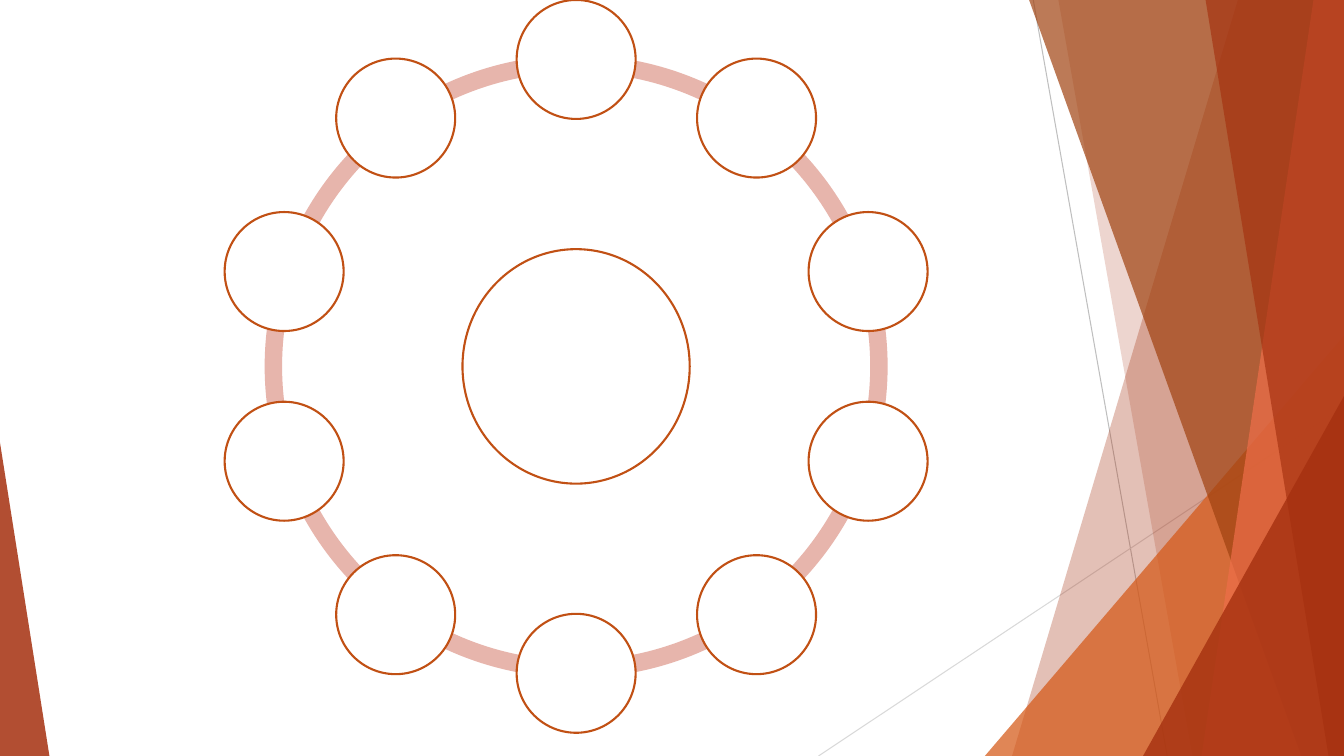
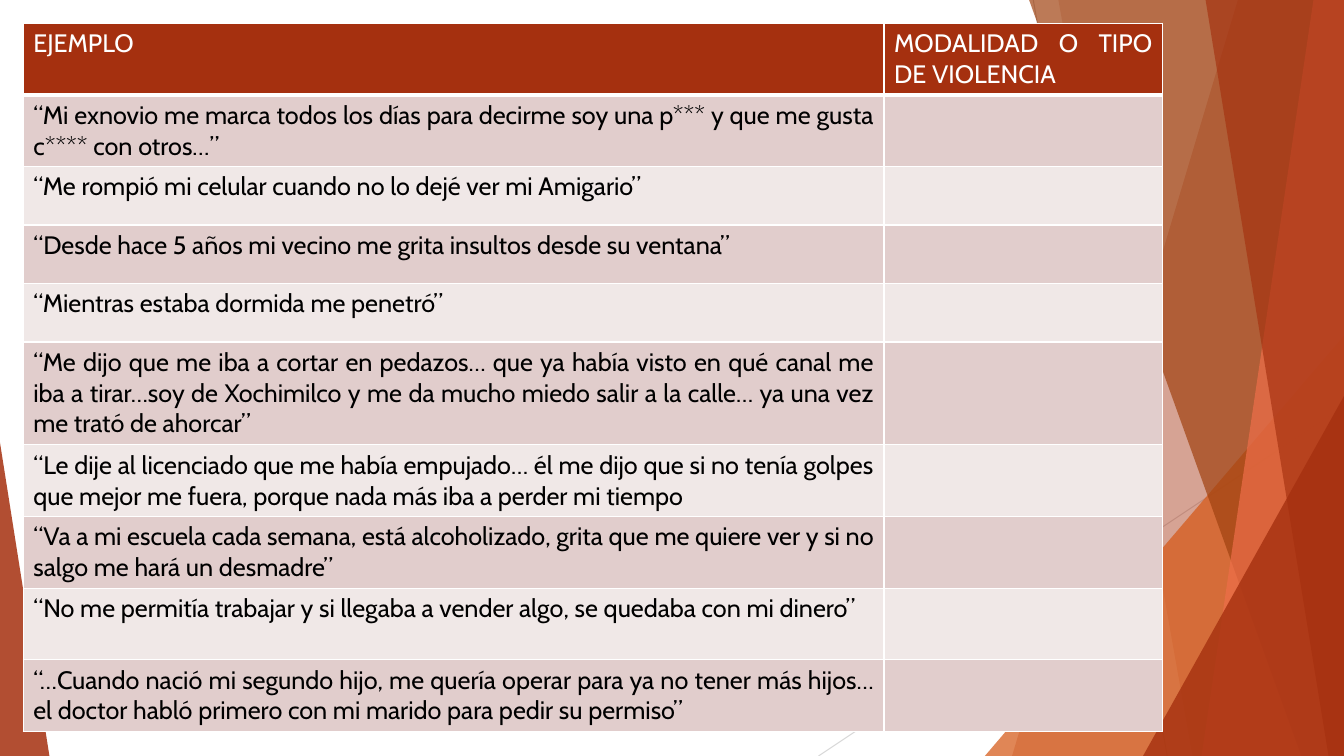
from math import cos, radians, sin

from lxml.etree import SubElement
from pptx import Presentation
from pptx.dml.color import RGBColor
from pptx.enum.shapes import MSO_CONNECTOR, MSO_SHAPE
from pptx.enum.text import PP_ALIGN
from pptx.oxml.ns import qn
from pptx.util import Inches, Pt

WIDTH, HEIGHT = Inches(13.33), Inches(7.5)
FONT = "Cabin"
WHITE, BLACK = "FFFFFF", "000000"
RUST, ORANGE, BROWN, CORAL = "A5300F", "D55816", "A04210", "EE6E4A"
BAND, OUTLINE = "E7B5AC", "C15014"
ROW_TINTS = ("E1CDCC", "F0E8E7")

# Right-hand bands: top x, bottom x (percent of width), colour, opacity
BACK_BANDS = [(92.1, 75.3, RUST, 30), (78.75, 88.73, RUST, 20)]
FRONT_BANDS = [(76.57, 96.83, BROWN, 70), (97.73, 89.4, CORAL, 70),
               (89.7, 98.85, RUST, 65)]

HEADINGS = ("EJEMPLO", "MODALIDAD O TIPO DE VIOLENCIA")
COLUMN_WEIGHTS = (8.54, 2.76)
HEADING_WEIGHT = 0.71
EXAMPLES = [  # row weight, text
    (0.71, "“Mi exnovio me marca todos los días para decirme soy una p*** y que me "
           "gusta c**** con otros…”"),
    (0.58, "“Me rompió mi celular cuando no lo dejé ver mi Amigario”"),
    (0.58, "“Desde hace 5 años mi vecino me grita insultos desde su ventana”"),
    (0.58, "“Mientras estaba dormida me penetró”"),
    (1.02, "“Me dijo que me iba a cortar en pedazos… que ya había visto en qué canal "
           "me iba a tirar…soy de Xochimilco y me da mucho miedo salir a la calle… "
           "ya una vez me trató de ahorcar”"),
    (0.71, "“Le dije al licenciado que me había empujado… él me dijo que si no tenía "
           "golpes que mejor me fuera, porque nada más iba a perder mi tiempo"),
    (0.71, "“Va a mi escuela cada semana, está alcoholizado, grita que me quiere ver "
           "y si no salgo me hará un desmadre”"),
    (0.71, "“No me permitía trabajar y si llegaba a vender algo, se quedaba con mi "
           "dinero”"),
    (0.71, "“…Cuando nació mi segundo hijo, me quería operar para ya no tener más "
           "hijos… el doctor habló primero con mi marido para pedir su permiso”"),
]


def color(hex_code):
    return RGBColor.from_string(hex_code)


def x(percent):
    return int(WIDTH * percent / 100)


def y(percent):
    return int(HEIGHT * percent / 100)


def paint(shape, fill, opacity=100, outline=None, weight=1.5):
    shape.shadow.inherit = False
    shape.fill.solid()
    shape.fill.fore_color.rgb = color(fill)
    if opacity < 100:
        tone = shape.element.spPr.find(".//" + qn("a:srgbClr"))
        SubElement(tone, qn("a:alpha"), val=str(opacity * 1000))
    if outline:
        shape.line.color.rgb = color(outline)
        shape.line.width = Pt(weight)
    else:
        shape.line.fill.background()


def write(frame, text, size=18, ink=BLACK, align=PP_ALIGN.JUSTIFY):
    paragraph = frame.paragraphs[0]
    paragraph.alignment = align
    run = paragraph.add_run()
    run.text = text
    run.font.name, run.font.size = FONT, Pt(size)
    run.font.color.rgb = color(ink)


# Shared backdrop
def add_thin_line(shapes, start, end, ink):
    line = shapes.add_connector(MSO_CONNECTOR.STRAIGHT, x(start[0]), y(start[1]),
                                x(end[0]), y(end[1]))
    line.line.color.rgb = color(ink)
    line.line.width = Pt(0.75)
    SubElement(line.element.spPr, qn("a:effectLst"))


def add_band(shapes, top_x, bottom_x, fill, opacity):
    outline = shapes.build_freeform(x(top_x), 0)
    outline.add_line_segments([(WIDTH, 0), (WIDTH, HEIGHT), (x(bottom_x), HEIGHT)])
    paint(outline.convert_to_shape(), fill, opacity)


def add_corner(shapes, left, right, top, apex, fill, opacity):
    corner = shapes.add_shape(MSO_SHAPE.ISOSCELES_TRIANGLE, x(left), y(top),
                              x(right - left), y(100 - top))
    corner.adjustments[0] = apex
    paint(corner, fill, opacity)


def build_backdrop(slide, layout):
    """Draw the decoration once and hand it to the layout."""
    shapes = slide.shapes
    add_thin_line(shapes, (76.88, 0), (86.85, 100), "BFBFBF")
    add_thin_line(shapes, (100, 53.73), (60.9, 100), "D9D9D9")
    for band in BACK_BANDS:
        add_band(shapes, *band)
    add_corner(shapes, 73.28, 100, 44.4, 1, ORANGE, 72)
    for band in FRONT_BANDS:
        add_band(shapes, *band)
    add_corner(shapes, 85.05, 100, 52.4, 1, RUST, 80)
    add_corner(shapes, 0, 3.68, 58.53, 0, RUST, 85)
    for part in list(shapes):
        layout.shapes.element.append(part.element)


# Ring of circles around a hub
def add_centered(shapes, kind, center, width, height):
    return shapes.add_shape(kind, int(center[0] - width / 2),
                            int(center[1] - height / 2), int(width), int(height))


def build_ring(slide, left, top, side, count=10):
    shapes = slide.shapes
    center = (left + side / 2, top + side / 2)
    node = side / 6.16
    orbit = (side - node) / 2
    step = 360 / count

    for index in range(count):
        start = step * (index + 0.5)
        arc = add_centered(shapes, MSO_SHAPE.BLOCK_ARC, center,
                           side * 0.85, side * 0.85)
        # Angle adjustments are counted in units of 1/0.6 degree
        arc.adjustments[0] = start % 360 * 0.6
        arc.adjustments[1] = (start + step) % 360 * 0.6
        arc.adjustments[2] = 0.028
        paint(arc, BAND)

    circles = [(center, side * 0.31, side * 0.32)]
    for index in range(count):
        angle = radians(step * index)
        spot = (center[0] + orbit * sin(angle), center[1] - orbit * cos(angle))
        circles.append((spot, node, node))
    for circle in circles:
        paint(add_centered(shapes, MSO_SHAPE.OVAL, *circle), WHITE, outline=OUTLINE)


# Table of examples
def format_cell(cell, fill, bottom=1):
    properties = cell._tc.get_or_add_tcPr()
    for edge, weight in (("L", 1), ("R", 1), ("T", 1), ("B", bottom)):
        border = SubElement(properties, qn("a:ln" + edge), w=str(Pt(weight)))
        SubElement(SubElement(border, qn("a:solidFill")), qn("a:srgbClr"), val=WHITE)
    cell.fill.solid()
    cell.fill.fore_color.rgb = color(fill)


def build_examples(slide, left, top, width, height):
    row_weights = [HEADING_WEIGHT] + [weight for weight, _ in EXAMPLES]
    table = slide.shapes.add_table(len(row_weights), len(COLUMN_WEIGHTS),
                                   left, top, width, height).table
    for column, weight in zip(table.columns, COLUMN_WEIGHTS):
        column.width = int(width * weight / sum(COLUMN_WEIGHTS))
    for row, weight in zip(table.rows, row_weights):
        row.height = int(height * weight / sum(row_weights))

    for cell, heading in zip(table.rows[0].cells, HEADINGS):
        format_cell(cell, RUST, bottom=3)
        write(cell.text_frame, heading, ink=WHITE)
    for index, (_, example) in enumerate(EXAMPLES):
        cells = list(table.rows[index + 1].cells)
        for cell in cells:
            format_cell(cell, ROW_TINTS[index % 2])
        write(cells[0].text_frame, example)


def main():
    deck = Presentation()
    deck.slide_width, deck.slide_height = WIDTH, HEIGHT
    blank = deck.slide_layouts[6]

    ring_slide = deck.slides.add_slide(blank)
    build_backdrop(ring_slide, blank)
    build_ring(ring_slide, x(15.6), 0, y(96.93))

    examples_slide = deck.slides.add_slide(blank)
    build_examples(examples_slide, x(1.73), y(3.07), x(84.75), y(93.7))

    deck.save("out.pptx")


if __name__ == "__main__":
    main()
